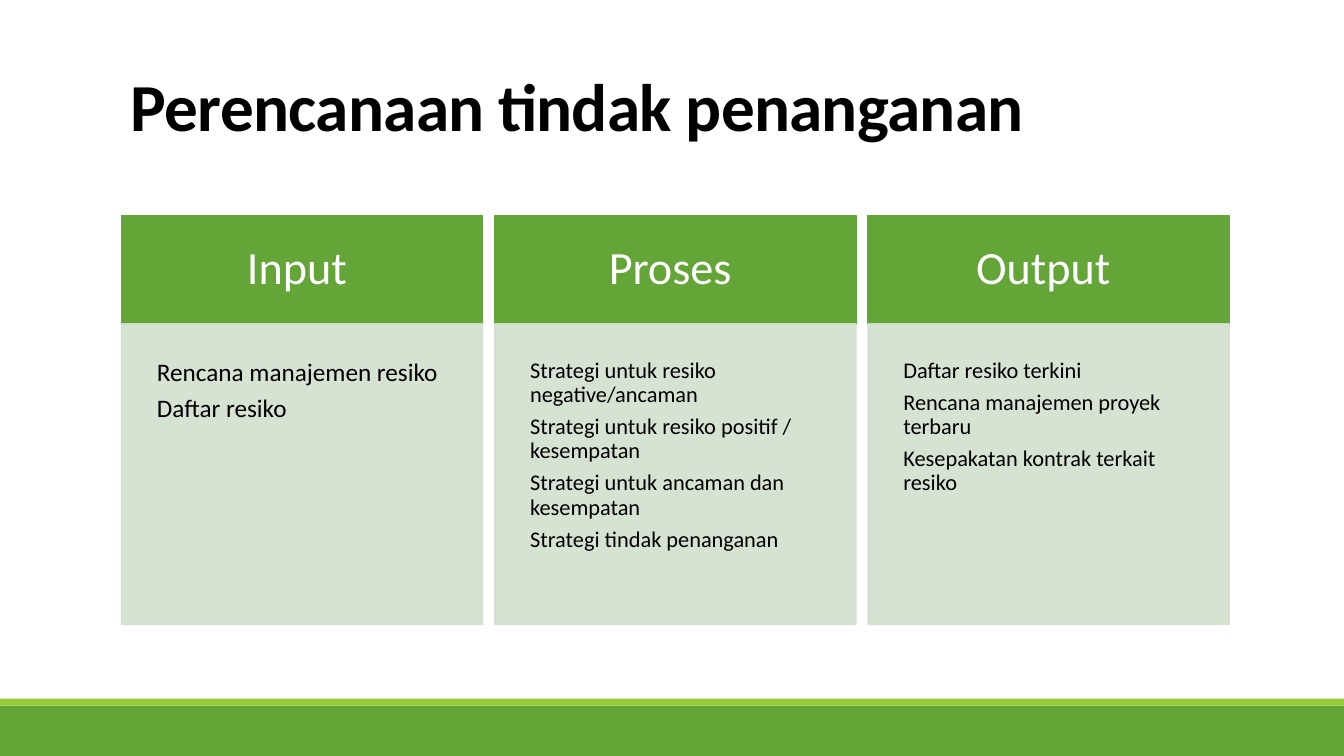
from lxml import etree
from pptx import Presentation
from pptx.dml.color import RGBColor
from pptx.enum.shapes import MSO_SHAPE
from pptx.enum.text import MSO_ANCHOR, PP_ALIGN
from pptx.oxml.ns import qn
from pptx.util import Pt

RECT = MSO_SHAPE.RECTANGLE
TOP, MIDDLE = MSO_ANCHOR.TOP, MSO_ANCHOR.MIDDLE
LEFT, CENTER = PP_ALIGN.LEFT, PP_ALIGN.CENTER

TITLE = "Perencanaan tindak penanganan"
COLUMNS = [
    ("Input ", 18, ["Rencana manajemen resiko", "Daftar resiko"]),
    ("Proses ", 16, ["Strategi untuk resiko negative/ancaman",
                     "Strategi untuk resiko positif / kesempatan",
                     "Strategi untuk ancaman dan kesempatan",
                     "Strategi tindak penanganan"]),
    ("Output ", 16, ["Daftar resiko terkini",
                     "Rencana manajemen proyek terbaru",
                     "Kesepakatan kontrak terkait resiko"]),
]

GREEN, LIME, PALE = "63A537", "99CB38", "D3E1CE"
BLACK, WHITE = "000000", "FFFFFF"
SLIDE_W, SLIDE_H = 960, 540
FOOTER_H, STRIPE_H = 36, 5
COL_LEFT, COL_W, COL_PITCH = 86.9, 257.8, 266.6
HEAD_TOP, HEAD_H, BODY_H = 154, 77.4, 214.6


def color(hex_value):
    return RGBColor.from_string(hex_value)


def set_alpha(fill_format, percent):
    """Make a solid shape or line fill partly transparent."""
    for clr in fill_format.iter(qn("a:srgbClr")):
        etree.SubElement(clr, qn("a:alpha"), val=str(percent * 1000))


def add_rect(slide, box, fill, outlined=False, alpha=None):
    sp = slide.shapes.add_shape(RECT, *map(Pt, box))
    sp.shadow.inherit = False
    sp.fill.solid()
    sp.fill.fore_color.rgb = color(fill)
    if outlined:
        sp.line.color.rgb = color(fill)
        sp.line.width = Pt(1.25)
    else:
        sp.line.fill.background()
    if alpha:
        set_alpha(sp._element.spPr, alpha)
    return sp


def write(sp, lines, size, font_color, inset, anchor=TOP, align=LEFT,
          line_spacing=0.9, after=0.35, bold=False):
    """Fill a shape with paragraphs; after is a share of the text size."""
    tf = sp.text_frame
    frame = {"word_wrap": True, "vertical_anchor": anchor}
    for side, value in zip(("left", "top", "right", "bottom"), inset):
        frame["margin_" + side] = Pt(value)
    for name, value in frame.items():
        setattr(tf, name, value)
    para = {"alignment": align, "line_spacing": line_spacing,
            "space_before": Pt(0), "space_after": Pt(size * after)}
    font = {"name": "Calibri", "size": Pt(size), "bold": bold}
    for i, line in enumerate(lines):
        p = tf.paragraphs[0] if i == 0 else tf.add_paragraph()
        for name, value in para.items():
            setattr(p, name, value)
        r = p.add_run()
        r.text = line
        for name, value in font.items():
            setattr(r.font, name, value)
        r.font.color.rgb = color(font_color)


prs = Presentation()
prs.slide_width, prs.slide_height = Pt(SLIDE_W), Pt(SLIDE_H)
slide = prs.slides.add_slide(prs.slide_layouts[6])

footer_top = SLIDE_H - FOOTER_H
add_rect(slide, (0, footer_top, SLIDE_W, FOOTER_H), GREEN)
add_rect(slide, (0, footer_top - STRIPE_H, SLIDE_W, STRIPE_H), LIME)

title = slide.shapes.add_textbox(Pt(86.4), Pt(22.3), Pt(792), Pt(114.5))
write(title, [TITLE], 48, BLACK, (7.2, 3.6, 7.2, 3.6), anchor=MIDDLE,
      line_spacing=0.85, after=0, bold=True)
title.text_frame.paragraphs[0].runs[0].font._element.set("spc", "-50")

for i, (heading, size, items) in enumerate(COLUMNS):
    x = COL_LEFT + i * COL_PITCH
    head = add_rect(slide, (x, HEAD_TOP, COL_W, HEAD_H), GREEN, outlined=True)
    write(head, [heading], 33, WHITE, [20] * 4, anchor=MIDDLE, align=CENTER)
    body = add_rect(slide, (x, HEAD_TOP + HEAD_H, COL_W, BODY_H), PALE,
                    outlined=True, alpha=90)
    write(body, items, size, BLACK, [25.2] * 4)

prs.save("out.pptx")
